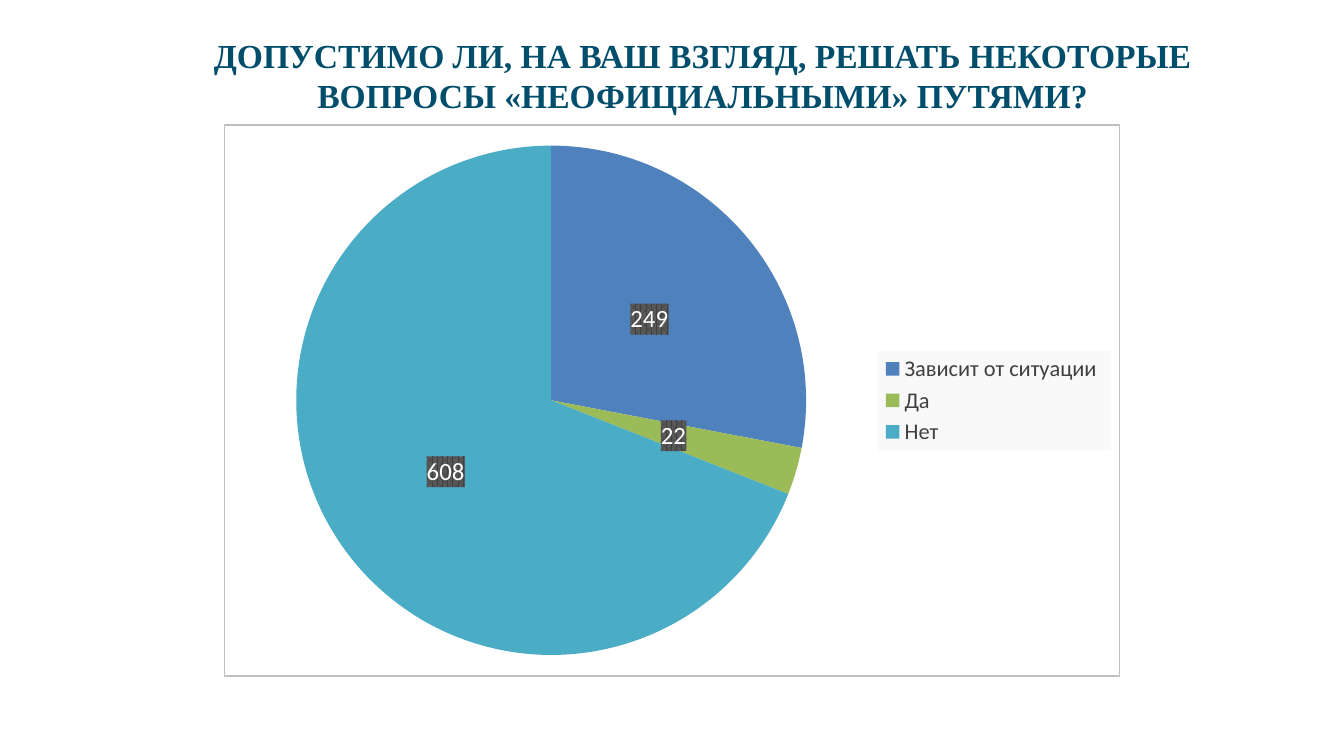
from dataclasses import dataclass

import lxml.etree
import pptx
import pptx.chart.data
import pptx.dml.color
import pptx.enum.chart
import pptx.enum.text
import pptx.oxml
import pptx.oxml.ns
import pptx.util

Pt = pptx.util.Pt
qn = pptx.oxml.ns.qn


@dataclass(frozen=True)
class Theme:
    title_font: str = "Times New Roman"
    chart_font: str = "Calibri"
    title_size: float = 18
    chart_size: float = 10
    legend_size: float = 12
    label_size: float = 13.3
    title: str = "004E6C"
    chart_text: str = "000000"
    legend_text: str = "404040"
    legend_fill: str = "F9F9F9"
    border: str = "BFBFBF"
    label_text: str = "FFFFFF"
    label_dark: str = "404040"
    label_light: str = "595959"


THEME = Theme()
ANSWERS = [  # category, percent, label, colour
    ("Зависит от ситуации ", 28, "249", "4F81BD"),
    ("Да", 3, "22", "9BBB59"),
    ("Нет", 69, "608", "4BACC6"),
]


def rgb(colour):
    return pptx.dml.color.RGBColor.from_string(colour)


def format_font(font, *, name, size, colour, bold=False):
    font.name = name
    font.size = Pt(size)
    font.bold = bold
    font.color.rgb = rgb(colour)


def write_text(text_frame, text, *, align=None, **font_format):
    paragraph = text_frame.paragraphs[0]
    paragraph.alignment = align
    run = paragraph.add_run()
    run.text = text
    format_font(run.font, **font_format)


def solid_fill(colour):
    return f'<a:solidFill><a:srgbClr val="{colour}"/></a:solidFill>'


def chart_properties(content):
    """Return a c:spPr element holding the given fill and line XML."""
    return pptx.oxml.parse_xml(
        f'<c:spPr {pptx.oxml.ns.nsdecls("c", "a")}>{content}</c:spPr>')


def set_layout(parent, index, inner=False, **fractions):
    """Place a plot area or legend by fractions of the chart's size."""
    for old in parent.findall(qn("c:layout")):
        parent.remove(old)
    layout = lxml.etree.Element(qn("c:layout"))
    manual = lxml.etree.SubElement(layout, qn("c:manualLayout"))
    settings = {"layoutTarget": "inner"} if inner else {}
    settings.update(xMode="edge", yMode="edge", **fractions)
    for tag, value in settings.items():
        lxml.etree.SubElement(manual, qn(f"c:{tag}")).set("val", str(value))
    parent.insert(index, layout)


def add_title(slide, text, left, top, width, height):
    title = slide.shapes.title
    title.left, title.top, title.width, title.height = left, top, width, height
    frame = title.text_frame
    frame.word_wrap = True
    frame.auto_size = pptx.enum.text.MSO_AUTO_SIZE.NONE
    frame.vertical_anchor = pptx.enum.text.MSO_ANCHOR.TOP
    write_text(frame, text, align=pptx.enum.text.PP_ALIGN.CENTER,
               name=THEME.title_font, size=THEME.title_size,
               colour=THEME.title, bold=True)


def format_slices(series):
    pattern = ('<a:pattFill prst="pct75">'
               f'<a:fgClr><a:srgbClr val="{THEME.label_dark}"/></a:fgClr>'
               f'<a:bgClr><a:srgbClr val="{THEME.label_light}"/></a:bgClr>'
               '</a:pattFill>')
    for index, (_, _, label_text, colour) in enumerate(ANSWERS):
        point = series.points[index]
        point.format.fill.solid()
        point.format.fill.fore_color.rgb = rgb(colour)
        label = point.data_label
        write_text(label.text_frame, label_text, name=THEME.chart_font,
                   size=THEME.label_size, colour=THEME.label_text)
        label.position = pptx.enum.chart.XL_LABEL_POSITION.CENTER
    for label_element in series.data_labels._element.findall(qn("c:dLbl")):
        label_element.find(qn("c:tx")).addnext(chart_properties(pattern))
    labels = series.data_labels
    labels.show_percentage = True
    labels.show_value = False
    labels.position = pptx.enum.chart.XL_LABEL_POSITION.CENTER
    format_font(labels.font, name=THEME.chart_font, size=THEME.label_size,
                colour=THEME.label_text, bold=True)


def format_legend(chart):
    chart.has_legend = True
    legend = chart.legend
    legend.position = pptx.enum.chart.XL_LEGEND_POSITION.RIGHT
    legend.include_in_layout = False
    format_font(legend.font, name=THEME.chart_font, size=THEME.legend_size,
                colour=THEME.legend_text)
    element = legend._element
    set_layout(element, 1, x=0.73, y=0.41, w=0.26, h=0.18)
    element.find(qn("c:overlay")).addnext(
        chart_properties(solid_fill(THEME.legend_fill)))


def add_answer_pie(slide, left, top, width, height):
    data = pptx.chart.data.CategoryChartData()
    data.categories = [answer[0] for answer in ANSWERS]
    data.add_series("Series 1", [answer[1] for answer in ANSWERS])
    chart = slide.shapes.add_chart(
        pptx.enum.chart.XL_CHART_TYPE.PIE, left, top, width, height, data).chart
    chart.has_title = False
    format_font(chart.font, name=THEME.chart_font, size=THEME.chart_size,
                colour=THEME.chart_text)
    plot = chart.plots[0]
    plot.vary_by_categories = True
    format_slices(plot.series[0])
    format_legend(chart)
    chart_element = chart._chartSpace.find(qn("c:chart"))
    set_layout(chart_element.find(qn("c:plotArea")), 0, inner=True,
               x=0.08, y=0.03, w=0.57, h=0.94)
    chart_element.addnext(chart_properties(
        f'<a:noFill/><a:ln w="{Pt(0.75)}">{solid_fill(THEME.border)}</a:ln>'))


def main():
    presentation = pptx.Presentation()
    presentation.slide_width = Pt(720)
    presentation.slide_height = Pt(405)
    slide = presentation.slides.add_slide(presentation.slide_layouts[5])
    add_title(slide, "ДОПУСТИМО ЛИ, НА ВАШ ВЗГЛЯД, РЕШАТЬ НЕКОТОРЫЕ "
              "ВОПРОСЫ «НЕОФИЦИАЛЬНЫМИ» ПУТЯМИ?",
              Pt(70.5), Pt(15), Pt(612), Pt(81))
    add_answer_pie(slide, Pt(120), Pt(66.5), Pt(480), Pt(296))
    presentation.save("out.pptx")


if __name__ == "__main__":
    main()
